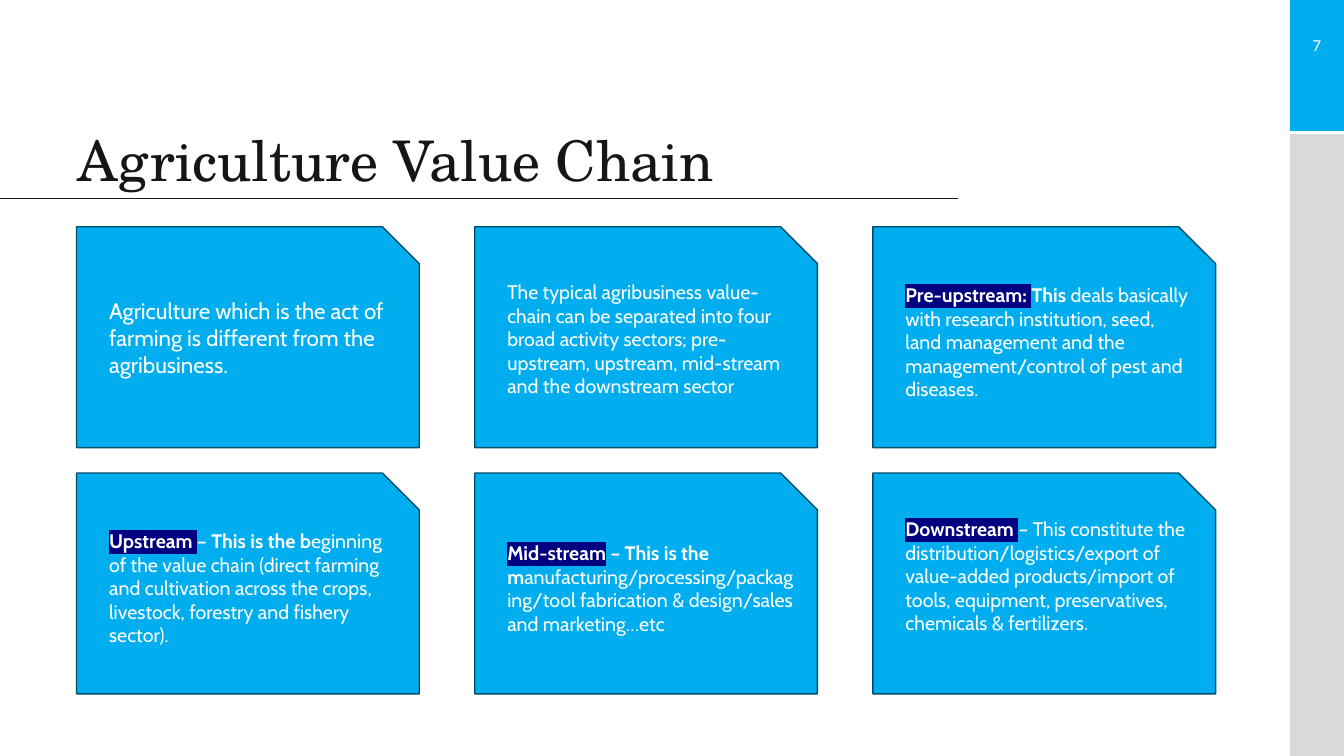
from lxml.etree import SubElement
from pptx import Presentation
from pptx.dml.color import RGBColor
from pptx.enum.shapes import MSO_CONNECTOR, MSO_SHAPE
from pptx.enum.text import MSO_ANCHOR as ANCHOR, PP_ALIGN as ALIGN
from pptx.oxml.ns import qn
from pptx.util import Pt

BLUE, EDGE, GREY, INK = "00AEEF", "004C69", "D9D9D9", "171616"
WHITE, NAVY = "FFFFFF", "000080"


def rgb(value):
    return RGBColor.from_string(value)


class Deck:
    """Slide size, fonts and the current slide."""
    body, heading, number = "Cabin", "TeX Gyre Schola", "Calibri"

    def __init__(self):
        self.prs = Presentation()
        self.prs.slide_width, self.prs.slide_height = Pt(960), Pt(540)
        self.slide = self.prs.slides.add_slide(self.prs.slide_layouts[6])

    def shape(self, kind, x, y, w, h, fill, line=None):
        sp = self.slide.shapes.add_shape(kind, Pt(x), Pt(y), Pt(w), Pt(h))
        sp.shadow.inherit = False
        sp.fill.solid()
        sp.fill.fore_color.rgb = rgb(fill)
        if line:
            sp.line.color.rgb = rgb(line)
            sp.line.width = Pt(1)
        else:
            sp.line.fill.background()

    def rule(self, x1, x2, y):
        cxn = self.slide.shapes.add_connector(
            MSO_CONNECTOR.STRAIGHT, Pt(x1), Pt(y), Pt(x2), Pt(y))
        cxn.line.color.rgb = rgb(INK)
        cxn.line.width = Pt(0.75)
        SubElement(cxn._element.spPr, qn("a:effectLst"))

    def text(self, x, y, w, h, runs, size, font, color=WHITE,
             anchor=ANCHOR.TOP, align=ALIGN.LEFT, spacing=None):
        """Each run is (text, style); b is bold, h is bold and highlighted."""
        tf = self.slide.shapes.add_textbox(Pt(x), Pt(y), Pt(w), Pt(h)).text_frame
        tf.word_wrap = True
        tf.vertical_anchor = anchor
        p = tf.paragraphs[0]
        p.alignment = align
        p.line_spacing = spacing
        p.font.size, p.font.name = Pt(size), font
        p.font.color.rgb = rgb(color)
        for words, style in runs:
            r = p.add_run()
            r.text = words
            if style:
                r.font.bold = True
            if style == "h":
                mark = SubElement(r._r.get_or_add_rPr(), qn("a:highlight"))
                SubElement(mark, qn("a:srgbClr"), val=NAVY)


# Text top, text size and runs of each card, row by row
CARDS = [
    (209, 16, [("Agriculture which is the act of farming is different from the "
                "agribusiness.", "")]),
    (196.6, 14, [("The typical agribusiness value-chain can be separated into four "
                  "broad activity sectors; pre-upstream, upstream, mid-stream and "
                  "the downstream sector", "")]),
    (198.7, 14, [("Pre-upstream: ", "h"), ("This ", "b"),
                 ("deals basically with research institution, seed, land management "
                  "and the management/control of pest and diseases.", "")]),
    (374.4, 14, [("Upstream ", "h"), ("– This is the b", "b"),
                 ("eginning of the value chain (direct farming and cultivation "
                  "across the crops, livestock, forestry and fishery sector).", "")]),
    (383, 14, [("Mid-stream", "h"), (" – This is the m", "b"),
               ("anufacturing/processing/packaging/tool fabrication & design/sales "
                "and marketing…etc", "")]),
    (365.8, 14, [("Downstream ", "h"),
                 ("– This constitute the distribution/logistics/export of "
                  "value-added products/import of tools, equipment, preservatives, "
                  "chemicals & fertilizers.", "")]),
]


def main():
    deck = Deck()

    # Side band with slide number
    deck.shape(MSO_SHAPE.RECTANGLE, 921.4, 0, 38.6, 93.6, BLUE)
    deck.shape(MSO_SHAPE.RECTANGLE, 921.4, 95.8, 38.6, 444.2, GREY)
    deck.text(917.3, 20.9, 46.8, 21.6, [("7", "")], 12, deck.number,
              anchor=ANCHOR.MIDDLE, align=ALIGN.CENTER)

    # Title over its rule
    deck.rule(0, 684, 141.8)
    deck.text(48.2, 70.6, 846, 71.3, [("Agriculture Value Chain", "")], 40,
              deck.heading, INK, anchor=ANCHOR.BOTTOM, spacing=0.9)

    # Cards, three to a row
    for i, (top, size, runs) in enumerate(CARDS):
        row, col = divmod(i, 3)
        x, y = 54.7 + col * 284.4, 162 + row * 175.9
        deck.shape(MSO_SHAPE.SNIP_1_RECTANGLE, x, y, 244.8, 157.7, BLUE, EDGE)
        deck.text(x + 16.2, top, 221, 92, runs, size, deck.body)

    deck.prs.save("out.pptx")


if __name__ == "__main__":
    main()
